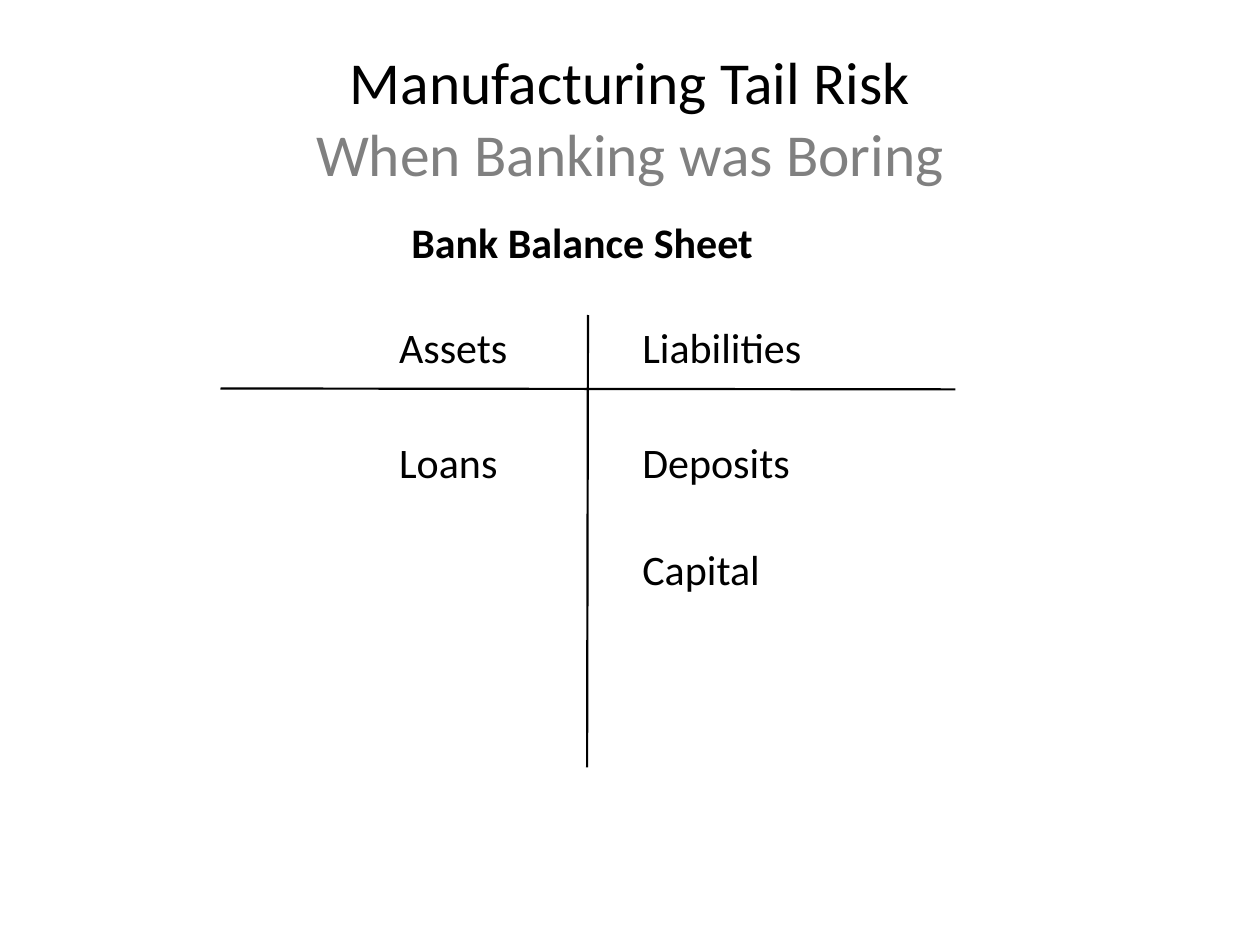
from pptx import Presentation
from pptx.dml.color import RGBColor
from pptx.enum.shapes import MSO_CONNECTOR as Link
from pptx.enum.text import MSO_ANCHOR as Anchor, PP_ALIGN as Align
from pptx.util import Pt
from lxml import etree

BLACK = RGBColor(0, 0, 0)
GRAY = RGBColor(128, 128, 128)
NS = "http://schemas.openxmlformats.org/drawingml/2006/main"

deck = Presentation()
deck.slide_width, deck.slide_height = Pt(720), Pt(540)
slide = deck.slides.add_slide(deck.slide_layouts[6])


def add_run(para, text, size, color=BLACK, bold=False):
    run = para.add_run()
    run.text = text
    font = run.font
    font.name, font.size, font.bold = "Calibri", Pt(size), bold
    font.color.rgb = color


def add_box(left, top, width, height, wrap=True):
    box = slide.shapes.add_textbox(Pt(left), Pt(top), Pt(width), Pt(height))
    box.text_frame.word_wrap = wrap
    return box.text_frame


for ends in [(126, 222, 546, 222.5), (335.5, 438.5, 336, 180)]:
    line = slide.shapes.add_connector(Link.STRAIGHT, *[Pt(n) for n in ends])
    line.line.color.rgb = BLACK
    line.line.width = Pt(1.25)
    etree.SubElement(line._element.spPr, f"{{{NS}}}effectLst")

ASSET, DEBT = 221, 360
HEAD, FIRST, NEXT = 180, 246, 307
labels = [
    ("Assets", ASSET, HEAD, 78, True),
    ("Liabilities", DEBT, HEAD, 108, True),
    ("Loans", ASSET, FIRST, 71, False),
    ("Deposits", DEBT, FIRST, 101.5, False),
    ("Capital", DEBT, NEXT, 83, False),
]
for text, left, top, width, wrap in labels:
    frame = add_box(left, top, width, 36.5, wrap)
    add_run(frame.paragraphs[0], text, 24)

frame = add_box(228, 120, 240, 36.5)
add_run(frame.paragraphs[0], "Bank Balance Sheet", 24, bold=True)

title = add_box(36, 21.6, 648, 90)
title.vertical_anchor = Anchor.MIDDLE
para = title.paragraphs[0]
para.alignment = Align.CENTER
add_run(para, "Manufacturing Tail Risk", 34)
para.add_line_break()
add_run(para, "When Banking was Boring", 34, GRAY)

deck.save("out.pptx")
